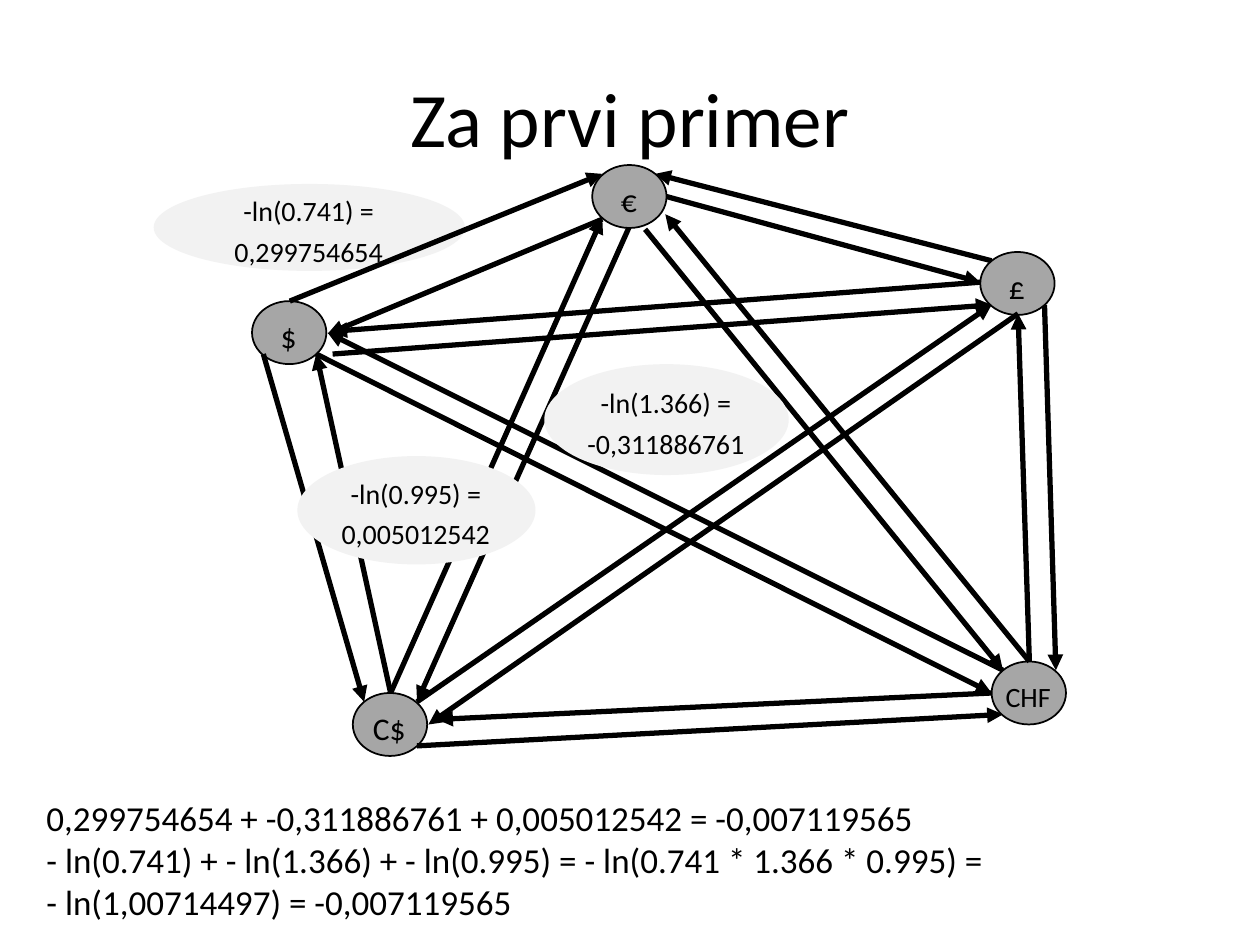
from lxml.etree import SubElement
from pptx import Presentation
from pptx.dml.color import RGBColor
from pptx.enum.shapes import MSO_CONNECTOR, MSO_SHAPE
from pptx.enum.text import MSO_ANCHOR, PP_ALIGN
from pptx.oxml.ns import qn
from pptx.util import Pt

PX = 9144
COLORS = {"ink": "000000", "node": "A6A6A6", "label": "F2F2F2"}
RGB = {name: RGBColor.from_string(value) for name, value in COLORS.items()}

prs = Presentation()
prs.slide_width, prs.slide_height = 1000 * PX, 750 * PX
s = prs.slides.add_slide(prs.slide_layouts[6])


def write(sp, lines, size, frame, para):
    tf = sp.text_frame
    for key, value in {"word_wrap": True, **frame}.items():
        setattr(tf, key, value)
    tf.text = "\n".join(lines)
    for p in tf.paragraphs:
        for key, value in para.items():
            setattr(p, key, value)
        for r in p.runs:
            for key, value in {"name": "Calibri", "size": Pt(size)}.items():
                setattr(r.font, key, value)
            r.font.color.rgb = RGB["ink"]


def ellipse(box, fill, text, size):
    sp = s.shapes.add_shape(MSO_SHAPE.OVAL, *[v * PX for v in box])
    sp.shadow.inherit = False
    sp.fill.solid()
    sp.fill.fore_color.rgb = RGB[fill]
    if fill == "node":
        sp.line.color.rgb = RGB["ink"]
        sp.line.width = Pt(1)
    else:
        sp.line.fill.background()
    frame = {"vertical_anchor": MSO_ANCHOR.MIDDLE, "margin_left": 0,
             "margin_top": 0, "margin_right": PX, "margin_bottom": 0}
    write(sp, [text], size, frame,
          {"alignment": PP_ALIGN.CENTER, "line_spacing": 1.2})


title = s.shapes.add_textbox(50 * PX, 30 * PX, 900 * PX, 125 * PX)
write(title, ["Za prvi primer"], 44,
      {"vertical_anchor": MSO_ANCHOR.MIDDLE}, {"alignment": PP_ALIGN.CENTER})

back_arrows = [
    (787, 207, 520, 138), (829, 242, 838, 532), (331, 557, 787, 242),
]
front_arrows = [
    (808, 249, 340, 575), (230, 239, 478, 138), (529, 156, 778, 224),
    (478, 174, 260, 265), (817, 525, 808, 249), (209, 281, 289, 557),
    (310, 550, 251, 281), (310, 550, 478, 173), (499, 181, 331, 557),
    (787, 550, 347, 571), (331, 592, 796, 567), (796, 532, 260, 264),
    (251, 281, 787, 550), (817, 525, 528, 170), (512, 182, 796, 532),
    (778, 224, 263, 263), (264, 281, 787, 242),
]
nodes = [
    (200, 239, "$", 18), (280, 550, "C$", 18), (778, 200, "£", 18),
    (470, 131, "€", 18), (787, 525, "CHF", 16),
]
back_labels = [((122, 146, 247, 69), "-ln(0.741) = 0,299754654")]
front_labels = [
    ((432, 289, 194, 88), "-ln(1.366) =\v-0,311886761"),
    ((236, 362, 189, 86), "-ln(0.995) = 0,005012542"),
]

for arrows, circles, labels in [(back_arrows, nodes, back_labels),
                                (front_arrows, [], front_labels)]:
    for ends in arrows:
        c = s.shapes.add_connector(MSO_CONNECTOR.STRAIGHT, *[v * PX for v in ends])
        c.line.color.rgb = RGB["ink"]
        c.line.width = Pt(3)
        SubElement(c.line._get_or_add_ln(), qn("a:tailEnd"), type="triangle")
        SubElement(c._element.spPr, qn("a:effectLst"))
    for x, y, text, size in circles:
        ellipse((x, y, 59, 50), "node", text, size)
    for box, text in labels:
        ellipse(box, "label", text, 16)

sums = s.shapes.add_textbox(27 * PX, 627 * PX, 945 * PX, 111 * PX)
write(sums, [
    "0,299754654 + -0,311886761 + 0,005012542 = -0,007119565",
    "- ln(0.741) + - ln(1.366) + - ln(0.995) = - ln(0.741 * 1.366 * 0.995) =",
    "- ln(1,00714497) = -0,007119565",
], 20, {}, {"alignment": PP_ALIGN.LEFT})

prs.save("out.pptx")
